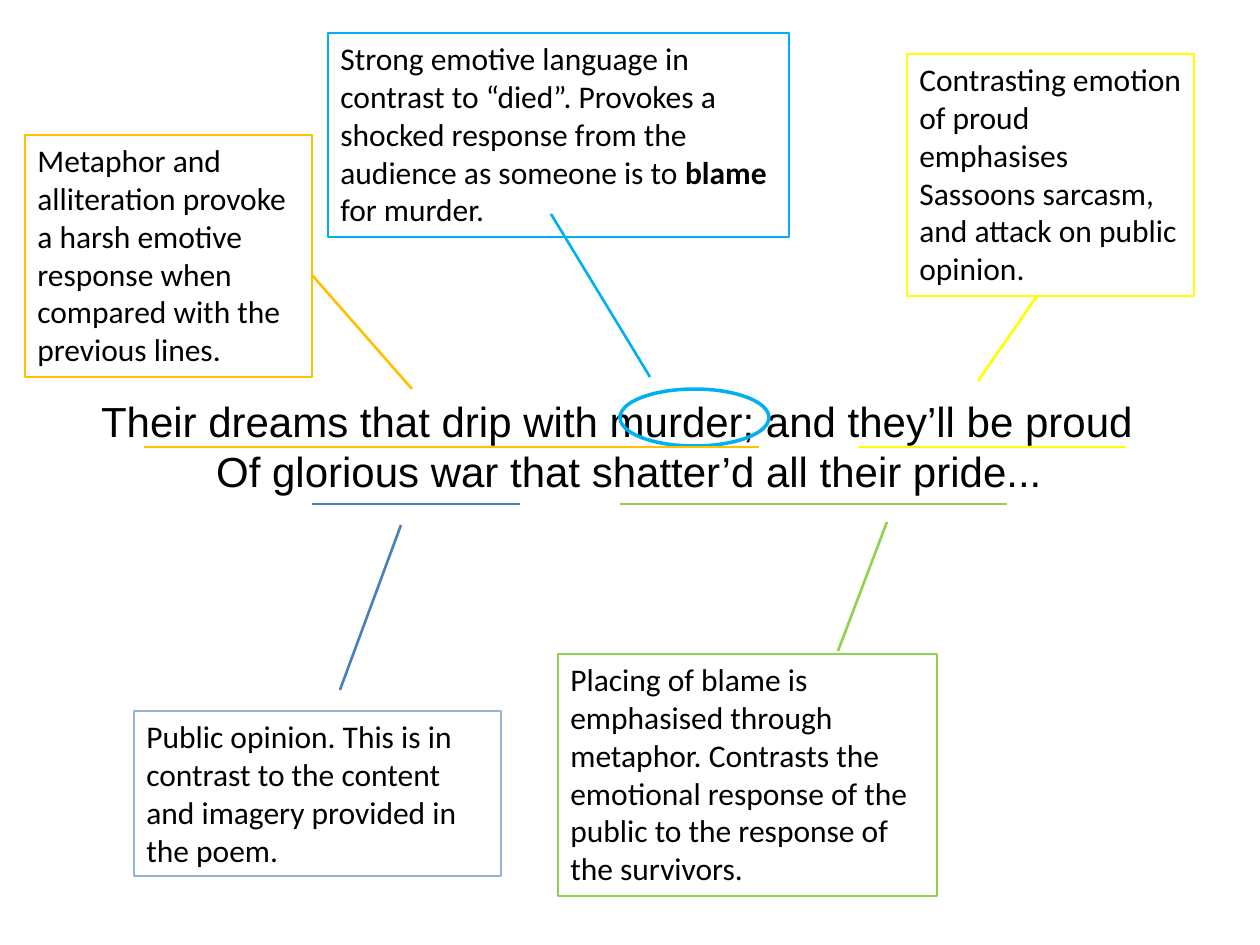
from lxml.etree import SubElement
from pptx import Presentation
from pptx.dml.color import RGBColor
from pptx.enum.shapes import MSO_CONNECTOR, MSO_SHAPE
from pptx.enum.text import MSO_ANCHOR, PP_ALIGN
from pptx.oxml.ns import qn
from pptx.util import Emu, Pt

QUOTE_AREA = (74, 389, 1086, 115)
QUOTE = [
    ("Their dreams that drip with murder; and they’ll be proud", 0),
    ("Of glorious war that shatter’d all their pride...", 24),
]
MURDER_RING = (620, 389, 149, 57)
BLUE = "00B0F0"
UNDERLINE_Y = [447, 504]

NOTES = [
    dict(area=(25, 135, 287, 242), color="FFC000", underline=(144, 759, 0),
         pointer=(412, 389, 312, 275),
         words=["Metaphor and alliteration provoke a harsh emotive response when "
                "compared with the previous lines."]),
    dict(area=(328, 33, 461, 204), color=BLUE, pointer=(650, 377, 551, 214),
         words=["Strong emotive language in contrast to “died”. Provokes a shocked "
                "response from the audience as someone is to ", "blame", " for murder."]),
    dict(area=(907, 54, 287, 242), color="FFFF00", underline=(858, 1126, 0),
         pointer=(978, 381, 1037, 296),
         words=["Contrasting emotion of proud emphasises Sassoons sarcasm, and "
                "attack on public opinion."]),
    dict(area=(134, 711, 367, 165), color="4B7EBC", border="95B3D7",
         underline=(312, 520, 1), pointer=(401, 525, 340, 690),
         words=["Public opinion. This is in contrast to the content and imagery "
                "provided in the poem."]),
    dict(area=(558, 654, 379, 242), color="92D050", underline=(620, 1007, 1),
         pointer=(887, 522, 838, 651),
         words=["Placing of blame is emphasised through metaphor. Contrasts the "
                "emotional response of the public to the response of the survivors."]),
]


def px(*lengths):
    return [Emu(round(length * 914400 / 126)) for length in lengths]


def paint(target, color):
    target.rgb = RGBColor.from_string(color)


def style_run(run, font_name, size):
    run.font.name = font_name
    run.font.size = Pt(size)
    paint(run.font.color, "000000")


def add_stroke(ends, color):
    stroke = slide.shapes.add_connector(MSO_CONNECTOR.STRAIGHT, *px(*ends))
    stroke.line.width = Pt(1.5)
    paint(stroke.line.color, color)
    SubElement(stroke._element.spPr, qn("a:effectLst"))


def add_outline(preset, area, color, width):
    outline = slide.shapes.add_shape(preset, *px(*area))
    outline.shadow.inherit = False
    outline.fill.background()
    outline.line.width = Pt(width)
    paint(outline.line.color, color)
    return outline


def add_quote():
    quote = slide.shapes.add_textbox(*px(*QUOTE_AREA)).text_frame
    quote.word_wrap = True
    quote.text = "\n".join(line for line, indent in QUOTE)
    for paragraph, (line, indent) in zip(quote.paragraphs, QUOTE):
        paragraph.alignment = PP_ALIGN.CENTER
        paragraph._p.get_or_add_pPr().set("marL", str(px(indent)[0]))
        style_run(paragraph.runs[0], "Arial", 24)


def add_note(area, color, pointer, words, underline=None, border=None):
    if underline:
        left, right, row = underline
        y = UNDERLINE_Y[row]
        add_stroke((left, y, right, y), color)
    add_stroke(pointer, color)
    note = add_outline(MSO_SHAPE.RECTANGLE, area, border or color, 0.75).text_frame
    note.word_wrap = True
    note.vertical_anchor = MSO_ANCHOR.TOP
    paragraph = note.paragraphs[0]
    paragraph.alignment = PP_ALIGN.LEFT
    for position, phrase in enumerate(words):
        run = paragraph.add_run()
        run.text = phrase
        run.font.bold = position == 1
        style_run(run, "Calibri", 18)


presentation = Presentation()
presentation.slide_width, presentation.slide_height = px(1260, 945)
slide = presentation.slides.add_slide(presentation.slide_layouts[6])
add_quote()
add_outline(MSO_SHAPE.OVAL, MURDER_RING, BLUE, 2)
for note in NOTES:
    add_note(**note)
presentation.save("out.pptx")
